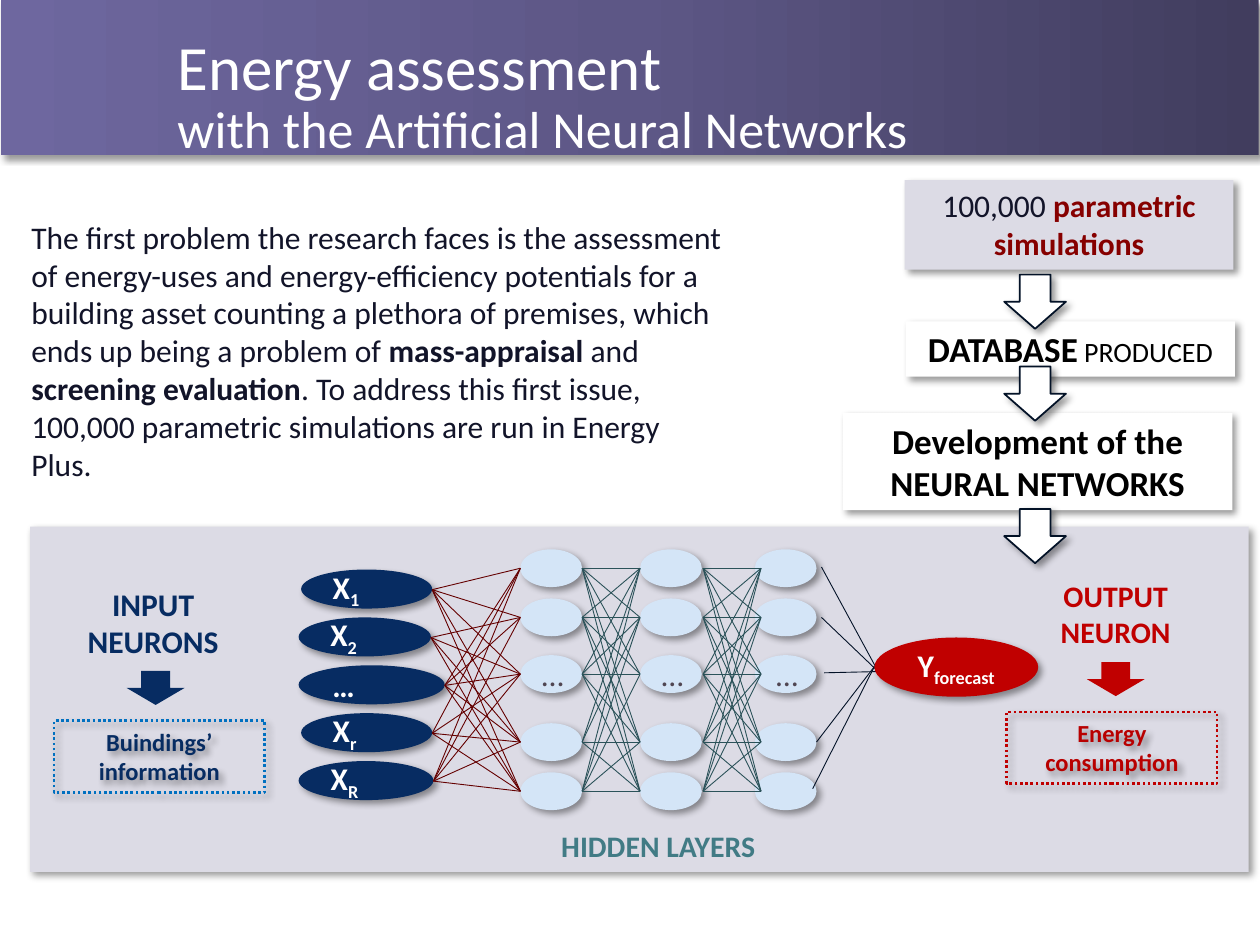
from copy import deepcopy
from dataclasses import dataclass
from itertools import product

from lxml import etree
from pptx import Presentation
from pptx.dml.color import RGBColor
from pptx.enum.dml import MSO_LINE
from pptx.enum.shapes import MSO_CONNECTOR, MSO_SHAPE as SHAPE
from pptx.enum.text import MSO_ANCHOR as ANCHOR, PP_ALIGN as ALIGN
from pptx.oxml.ns import qn
from pptx.util import Inches, Pt


@dataclass(frozen=True)
class Theme:
    font: str = "Calibri"
    white: str = "FFFFFF"
    black: str = "000000"
    ink: str = "121429"
    outline: str = "031227"
    panel: str = "DCDBE5"
    navy: str = "072C62"
    blue: str = "0070C0"
    red: str = "C00000"
    brick: str = "B80000"
    maroon: str = "860000"
    wine: str = "640000"
    teal: str = "417B85"
    dark_teal: str = "2B5259"
    pale: str = "D4E5F7"
    grey: str = "504652"
    banner: tuple = ("413D5E", "5D5786", "6E679F")
    title: float = 36
    subtitle: float = 29.7
    heading: float = 20
    body: float = 18
    label: float = 17
    small: float = 16
    note: float = 14


T = Theme()


class SlideBuilder:
    def __init__(self, slide, theme):
        self.slide = slide
        self.theme = theme

    @staticmethod
    def add_shadow(effects):
        shadow = etree.SubElement(effects, qn("a:outerShdw"), blurRad="50800",
                                  dist="38100", dir="2700000", algn="tl", rotWithShape="0")
        color = etree.SubElement(shadow, qn("a:srgbClr"), val="000000")
        etree.SubElement(color, qn("a:alpha"), val="40000")

    def shape(self, kind, box, fill=None, line=None, width=1, dash=None, shadow=True, rotation=0):
        sp = self.slide.shapes.add_shape(kind, *map(Inches, box))
        sp.rotation = rotation
        if fill:
            sp.fill.solid()
            sp.fill.fore_color.rgb = RGBColor.from_string(fill)
        else:
            sp.fill.background()
        if line:
            sp.line.color.rgb = RGBColor.from_string(line)
            sp.line.width = Pt(width)
            if dash:
                sp.line.dash_style = dash
        else:
            sp.line.fill.background()
        sp.shadow.inherit = False
        if shadow:
            self.add_shadow(sp._element.spPr.find(qn("a:effectLst")))
        return sp

    def banner(self, box, colors):
        """Draw a rectangle with a three-stop horizontal gradient."""
        sp = self.shape(SHAPE.RECTANGLE, box)
        sp.fill.gradient()
        sp.fill.gradient_angle = 180
        stops = sp._element.spPr.find(qn("a:gradFill")).find(qn("a:gsLst"))
        stops.insert(1, deepcopy(stops[0]))
        for stop, color, position in zip(sp.fill.gradient_stops, colors, (0, 0.5, 1)):
            stop.color.rgb = RGBColor.from_string(color)
            stop.position = position

    def set_text(self, sp, runs, size, color, bold=False, align=ALIGN.CENTER, anchor=ANCHOR.TOP):
        """Fill a shape with runs, each a text or a (text, changes) pair."""
        tf = sp.text_frame
        tf.word_wrap = True
        tf.vertical_anchor = anchor
        p = tf.paragraphs[0]
        p.alignment = align
        for item in [runs] if isinstance(runs, str) else runs:
            text, changes = (item, {}) if isinstance(item, str) else item
            r = p.add_run()
            r.text = text
            r.font.name = self.theme.font
            r.font.size = Pt(changes.get("size", size))
            r.font.bold = changes.get("bold", bold)
            r.font.color.rgb = RGBColor.from_string(changes.get("color", color))
            if changes.get("sub"):
                r.font._element.set("baseline", "-25000")
        return p

    def text(self, box, runs, size, color, **style):
        sp = self.slide.shapes.add_textbox(*map(Inches, box))
        return self.set_text(sp, runs, size, color, **style)

    def title(self, box, first, second):
        p = self.text(box, first, self.theme.title, self.theme.white,
                      align=ALIGN.LEFT, anchor=ANCHOR.BOTTOM)
        p.line_spacing = 0.9
        p.add_line_break()
        r = p.add_run()
        r.text = second
        r.font.size = Pt(self.theme.subtitle)
        r.font.color.rgb = RGBColor.from_string(self.theme.white)
        r.font.name = self.theme.font
        for r in p.runs:
            effects = etree.Element(qn("a:effectLst"))
            self.add_shadow(effects)
            r.font._element.find(qn("a:solidFill")).addnext(effects)

    def arrow_down(self, box, fill, **style):
        self.shape(SHAPE.RIGHT_ARROW, box, fill, rotation=90, **style)

    def line(self, start, end, color):
        c = self.slide.shapes.add_connector(
            MSO_CONNECTOR.STRAIGHT, *map(Inches, (*start, *end)))
        c.line.color.rgb = RGBColor.from_string(color)
        c.line.width = Pt(0.5)
        etree.SubElement(c._element.spPr, qn("a:effectLst"))

    def links(self, starts, ends, color, skip=()):
        """Join every start to every end, except the (start, end) index pairs in skip."""
        for (i, start), (j, end) in product(enumerate(starts), enumerate(ends)):
            if (i, j) not in skip:
                self.line(start, end, color)


def draw_network(s):
    input_ports = []
    inputs = [("1", 2.39, 1.04), ("2", 2.37, 1.05), (None, 2.37, 1.16),
              ("r", 2.39, 1.04), ("R", 2.37, 1.07)]
    for i, (index, left, width) in enumerate(inputs):
        top = 4.52 + 0.38 * i
        sp = s.shape(SHAPE.OVAL, (left, top, width, 0.31), T.navy)
        runs = ["X", (index, {"sub": True})] if index else "…"
        s.set_text(sp, runs, T.body, T.white, bold=True, align=ALIGN.LEFT, anchor=ANCHOR.MIDDLE)
        input_ports.append((left + width, top + 0.16))

    middle_row = 2
    row_tops = (4.36, 4.75, 5.2, 5.74, 6.13)
    for left, row in product((4.13, 5.08, 5.99), range(5)):
        sp = s.shape(SHAPE.OVAL, (left, row_tops[row], 0.49, 0.3), T.pale)
        if row == middle_row:
            s.set_text(sp, "…", T.body, T.grey, anchor=ANCHOR.MIDDLE)

    def ports(x):
        return [(x, top + 0.15) for top in row_tops]

    s.links(input_ports, ports(4.13), T.wine, skip={(1, 0), (3, 1)})
    s.links(ports(4.62), ports(5.08), T.dark_teal, skip={(3, middle_row)})
    s.links(ports(5.58), ports(6.04), T.dark_teal)
    s.links([(6.52, 4.5), (6.52, 4.9), (6.54, 5.34)], [(6.97, 5.33)], T.outline)
    s.links([(6.45, 6.26), (6.48, 5.89)], [(6.94, 5.29)], T.outline)

    output = s.shape(SHAPE.OVAL, (6.94, 5.06, 1.3, 0.47), T.red)
    s.set_text(output, ["Y", ("forecast", {"sub": True})], T.body, T.white,
               bold=True, anchor=ANCHOR.MIDDLE)

    s.text((8.02, 4.54, 1.67, 0.67), "OUTPUT NEURON", T.label, T.red, bold=True)
    s.text((3.74, 6.52, 2.97, 0.39), "HIDDEN LAYERS", T.label, T.teal, bold=True)
    s.text((0.49, 4.59, 1.45, 0.71), "INPUT NEURONS", T.body, T.navy, bold=True)
    for left, top, text, border, color in (
            (0.43, 5.72, "Buindings’ information", T.blue, T.navy),
            (7.99, 5.65, "Energy consumption", T.red, T.brick)):
        sp = s.shape(SHAPE.RECTANGLE, (left, top, 1.67, 0.57), line=border,
                     width=1.5, dash=MSO_LINE.ROUND_DOT)
        s.set_text(sp, text, T.note, color, bold=True)
    s.arrow_down((1.1, 5.23, 0.27, 0.46), T.navy, shadow=False)
    s.arrow_down((8.72, 5.16, 0.27, 0.46), T.red, shadow=False)


def draw_workflow(s):
    steps = [
        ((7.18, 1.43, 2.61, 0.71), T.panel, T.body, T.ink, False,
         ["100,000 ", ("parametric simulations", {"color": T.maroon, "bold": True})]),
        ((7.19, 2.55, 2.61, 0.44), T.white, T.heading, T.black, True,
         ["DATABASE", (" PRODUCED", {"size": T.small, "bold": False})]),
        ((6.69, 3.28, 3.09, 0.77), T.white, T.heading, T.black, True,
         "Development of the NEURAL NETWORKS"),
    ]
    for box, fill, size, color, bold, runs in steps:
        s.set_text(s.shape(SHAPE.RECTANGLE, box, fill), runs, size, color, bold=bold)
    for top in (2.15, 2.88, 4.01):
        s.arrow_down((8, top, 0.43, 0.49), T.white, line=T.outline)


def main():
    prs = Presentation()
    prs.slide_width, prs.slide_height = Inches(10), Inches(7.5)
    s = SlideBuilder(prs.slides.add_slide(prs.slide_layouts[6]), T)

    s.banner((0.01, 0, 9.98, 1.23), T.banner)
    s.shape(SHAPE.RECTANGLE, (0.24, 4.18, 9.67, 2.74), T.panel)
    s.title((1.31, 0.58, 8.78, 0.74), "Energy assessment", "with the Artificial Neural Networks")
    draw_network(s)
    draw_workflow(s)
    strong = {"bold": True}
    s.text((0.15, 1.68, 5.72, 2.22), [
        "The first problem the research faces is the assessment of energy-uses and "
        "energy-efficiency potentials for a building asset counting a plethora of premises, "
        "which ends up being a problem of ",
        ("mass-appraisal", strong), " and ", ("screening evaluation", strong),
        ". To address this first issue, 100,000 parametric simulations are run in Energy Plus.",
    ], T.body, T.ink, align=ALIGN.LEFT)
    prs.save("out.pptx")


if __name__ == "__main__":
    main()
